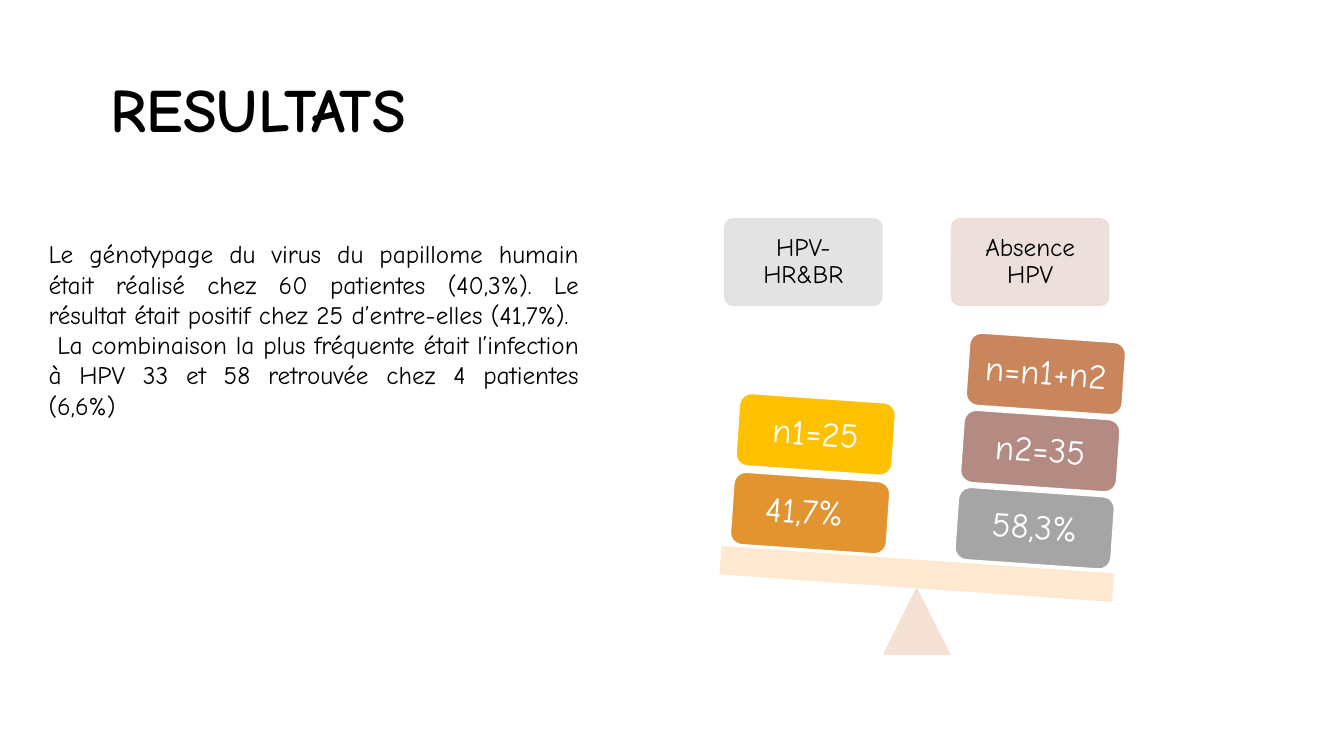
from lxml import etree
from pptx import Presentation
from pptx import util as u
from pptx.dml.color import RGBColor
from pptx.enum import shapes, text
from pptx.oxml.ns import qn

Pt = u.Pt
FONT = "Comic Neue"
COLORS = {
    "black": "000000", "white": "FFFFFF",
    "positive_header": "E1E1E1", "absence_header": "ECDCD9",
    "pivot": "F6DFD1", "beam": "FFE7CB",
    "gold": "FFC000", "orange": "E19430",
    "grey": "A5A5A5", "mauve": "B48B83", "copper": "C9855C",
}


def add_run(paragraph, wording, size, color, bold=False):
    run = paragraph.add_run()
    run.text = wording
    run.font.name = FONT
    run.font.size = Pt(size)
    run.font.bold = bold
    run.font.color.rgb = RGBColor.from_string(COLORS[color])


def add_part(kind, box, fill, line=None, wording="", size=18, color="black", margin=7):
    """Add a scale part; without a line colour it is slightly see-through."""
    shape = slide.shapes.add_shape(kind, *[Pt(value) for value in box])
    shape.shadow.inherit = False
    shape.fill.solid()
    shape.fill.fore_color.rgb = RGBColor.from_string(COLORS[fill])
    shape.line.width = Pt(1)
    shape.line.color.rgb = RGBColor.from_string(COLORS[line or fill])
    if line is None:
        for color_element in shape._element.spPr.iter(qn("a:srgbClr")):
            etree.SubElement(color_element, qn("a:alpha"), val="90000")
    if wording:
        frame = shape.text_frame
        frame.word_wrap = True
        frame.vertical_anchor = text.MSO_ANCHOR.MIDDLE
        frame.margin_left = frame.margin_right = Pt(margin)
        frame.margin_top = frame.margin_bottom = Pt(margin)
        paragraph = frame.paragraphs[0]
        paragraph.alignment = text.PP_ALIGN.CENTER
        paragraph.line_spacing = 0.9
        add_run(paragraph, wording, size, color)
    return shape


presentation = Presentation()
presentation.slide_width, presentation.slide_height = Pt(960), Pt(540)
slide = presentation.slides.add_slide(presentation.slide_layouts[5])

# Title
title = slide.shapes.title
title.left, title.top, title.width, title.height = Pt(72), Pt(28), Pt(828), Pt(104.4)
title.text_frame.vertical_anchor = text.MSO_ANCHOR.MIDDLE
title_paragraph = title.text_frame.paragraphs[0]
title_paragraph.alignment = text.PP_ALIGN.LEFT
title_paragraph.line_spacing = 0.9
add_run(title_paragraph, "RESULTATS", 44, "black", bold=True)

# Findings
findings = slide.shapes.add_textbox(Pt(27.6), Pt(167), Pt(393), Pt(160))
findings.text_frame.word_wrap = True
sentences = [
    "Le génotypage du virus du papillome humain était réalisé chez 60 patientes "
    "(40,3%). Le résultat était positif chez 25 d’entre-elles (41,7%).",
    " La combinaison la plus fréquente était l’infection à HPV 33 et 58 retrouvée "
    "chez 4 patientes (6,6%) ",
]
for index, sentence in enumerate(sentences):
    frame = findings.text_frame
    paragraph = frame.add_paragraph() if index else frame.paragraphs[0]
    paragraph.alignment = text.PP_ALIGN.JUSTIFY
    add_run(paragraph, sentence, 18, "black")

# Headers above the two pans
ROUNDED = shapes.MSO_SHAPE.ROUNDED_RECTANGLE
headers = [(517.7, "positive_header", "HPV-HR&BR"), (679.7, "absence_header", "Absence HPV")]
for left, fill, wording in headers:
    header = add_part(ROUNDED, (left, 156.2, 112.3, 62), fill, wording=wording)
    header.adjustments[0] = 0.1

# Pivot and tilted beam
TILT = 4
add_part(shapes.MSO_SHAPE.ISOSCELES_TRIANGLE, (631.4, 420.5, 46.8, 46.8), "pivot")
beam = add_part(shapes.MSO_SHAPE.RECTANGLE, (514.8, 400.3, 280.1, 19.4), "beam")
beam.rotation = TILT

# Weights, stacked from the beam upwards along its tilt
stacks = [
    (683.3, 351.4, 55.1, [("58,3%", "grey"), ("n2=35", "mauve"), ("n=n1+n2", "copper")]),
    (522.9, 340.6, 56.2, [("41,7% ", "orange"), ("n1=25", "gold")]),
]
for left, top, step, weights in stacks:
    for level, (wording, fill) in enumerate(weights):
        box = (left + 4 * level, top - step * level, 111.6, 51.8)
        weight = add_part(ROUNDED, box, fill, "white", wording, 25, "white", 9.5)
        weight.rotation = TILT

presentation.save("out.pptx")
